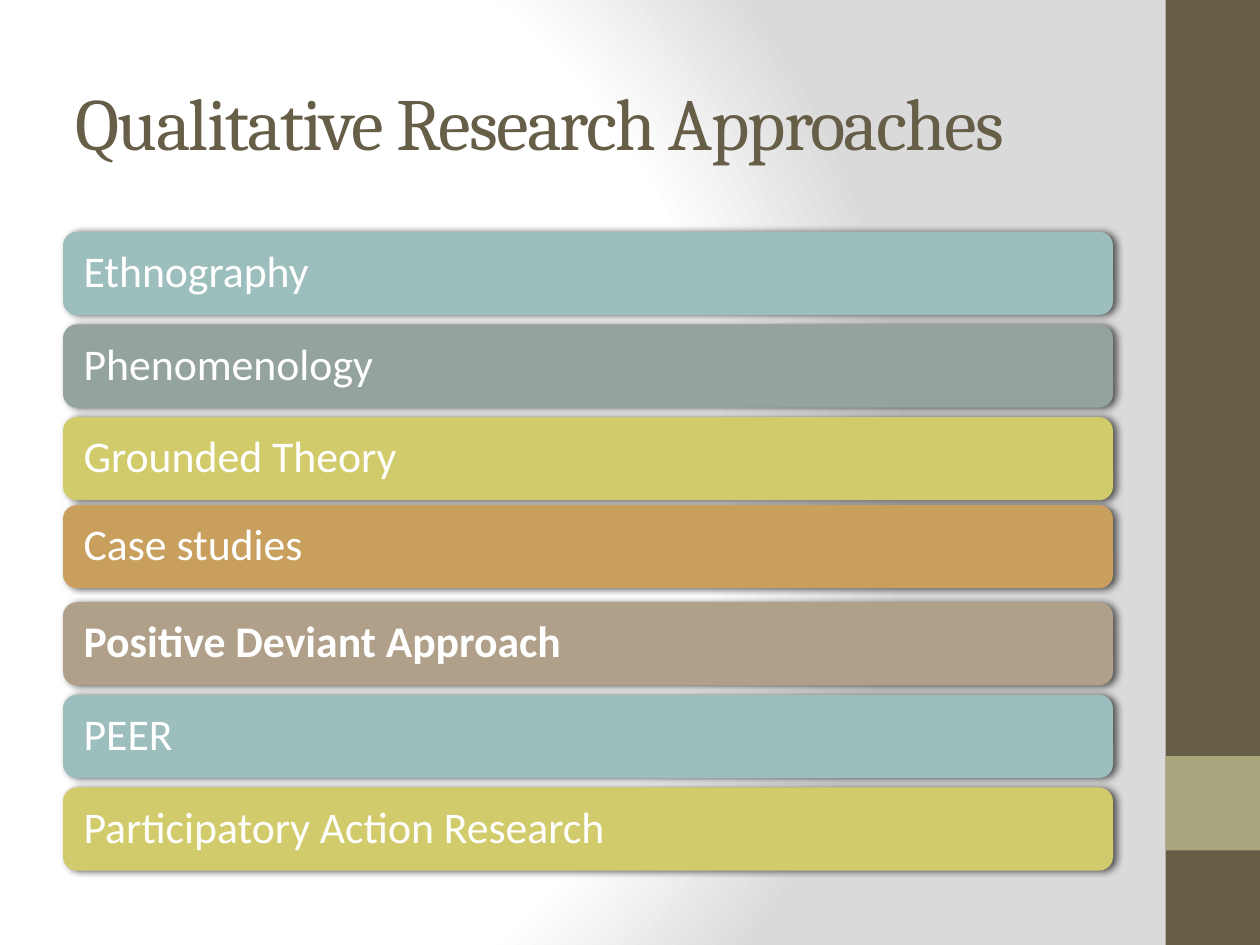
from lxml.etree import SubElement
from pptx import Presentation
from pptx.dml.color import RGBColor
from pptx.enum.shapes import MSO_SHAPE
from pptx.enum.text import MSO_ANCHOR, PP_ALIGN
from pptx.oxml import parse_xml
from pptx.oxml.ns import nsdecls, qn
from pptx.util import Pt

WHITE = RGBColor(0xFF, 0xFF, 0xFF)
GRAY = RGBColor(0xDA, 0xDA, 0xDA)
BROWN = RGBColor(0x67, 0x5E, 0x47)
OLIVE = RGBColor(0xA9, 0xA5, 0x7C)
TEAL = RGBColor(0x9C, 0xBE, 0xBD)
SAGE = RGBColor(0x95, 0xA3, 0x9D)
LIME = RGBColor(0xD2, 0xCB, 0x6C)
OCHRE = RGBColor(0xC8, 0x9F, 0x5D)
TAUPE = RGBColor(0xB1, 0xA0, 0x89)

APPROACHES = [
    ("Ethnography", TEAL, False, 0),
    ("Phenomenology", SAGE, False, 0),
    ("Grounded Theory", LIME, False, 0),
    ("Case studies", OCHRE, False, -2.6),
    ("Positive Deviant Approach", TAUPE, True, 0),
    ("PEER", TEAL, False, 0),
    ("Participatory Action Research", LIME, False, 0),
]


def paint_background(page):
    """Fill the page with a radial gradient from white to gray."""
    page.background.fill.solid()
    properties = page.element.find(".//" + qn("p:bgPr"))
    stops = "".join(
        f'<a:gs pos="{position * 1000}"><a:srgbClr val="{color}"/></a:gs>'
        for position, color in ((0, WHITE), (75, WHITE), (100, GRAY))
    )
    gradient = parse_xml(
        f'<a:gradFill {nsdecls("a")} rotWithShape="1"><a:gsLst>{stops}</a:gsLst>'
        '<a:path path="circle"><a:fillToRect l="20000" t="50000" r="100000" b="50000"/>'
        "</a:path></a:gradFill>"
    )
    properties.replace(properties[0], gradient)


def add_block(page, kind, left, top, width, height, color):
    """Add a plain filled shape without line or shadow."""
    block = page.shapes.add_shape(kind, Pt(left), Pt(top), Pt(width), Pt(height))
    block.fill.solid()
    block.fill.fore_color.rgb = color
    block.line.fill.background()
    block.shadow.inherit = False
    return block


def write_line(box, text, font_name, size, color, bold=False):
    """Write one left-aligned, vertically centred line in a box."""
    frame = box.text_frame
    frame.word_wrap = True
    frame.vertical_anchor = MSO_ANCHOR.MIDDLE
    para = frame.paragraphs[0]
    para.alignment = PP_ALIGN.LEFT
    span = para.add_run()
    span.text = text
    span.font.name = font_name
    span.font.size = Pt(size)
    span.font.bold = bold
    span.font.color.rgb = color
    return para, span


def cast_shadow(shape):
    """Give a shape a soft shadow to its right."""
    effects = shape.element.spPr.find(qn("a:effectLst"))
    shadow = SubElement(
        effects, qn("a:outerShdw"), blurRad=str(Pt(4)), dist=str(Pt(2)), dir="0", rotWithShape="0"
    )
    color = SubElement(shadow, qn("a:srgbClr"), val="000000")
    SubElement(color, qn("a:alpha"), val="60000")


def add_side_band(page, left, top, width, height):
    """Add the dark side band with its lighter square."""
    add_block(page, MSO_SHAPE.RECTANGLE, left, top, width, height, BROWN)
    add_block(page, MSO_SHAPE.RECTANGLE, left, top + 0.8 * height, width, width, OLIVE)


def add_title(page, left, top, width, height):
    """Add the slide title."""
    box = page.shapes.add_textbox(Pt(left), Pt(top), Pt(width), Pt(height))
    _, span = write_line(box, "Qualitative Research Approaches", "Cambria", 42, BROWN)
    span.font._element.set("spc", "-100")


def add_approach_list(page, left, top, width, height):
    """Stack one rounded bar for each approach in the given box."""
    bar_height = 47.5
    pitch = (height - bar_height) / (len(APPROACHES) - 1)
    for index, (name, color, bold, nudge) in enumerate(APPROACHES):
        bar_top = top + index * pitch + nudge
        bar = add_block(
            page, MSO_SHAPE.ROUNDED_RECTANGLE, left, bar_top, width, bar_height, color
        )
        cast_shadow(bar)
        para, _ = write_line(bar, name, "Calibri", 25, WHITE, bold)
        para.line_spacing = 0.9
        frame = bar.text_frame
        frame.margin_left = frame.margin_right = Pt(9.5)


def main():
    """Build the slide and save the deck."""
    deck = Presentation()
    deck.slide_width, deck.slide_height = Pt(720), Pt(540)
    page = deck.slides.add_slide(deck.slide_layouts[6])
    paint_background(page)
    add_side_band(page, 666, 0, 54, 540)
    add_title(page, 36, 24, 600, 90)
    add_approach_list(page, 36, 132.5, 600, 365)
    deck.save("out.pptx")


if __name__ == "__main__":
    main()
